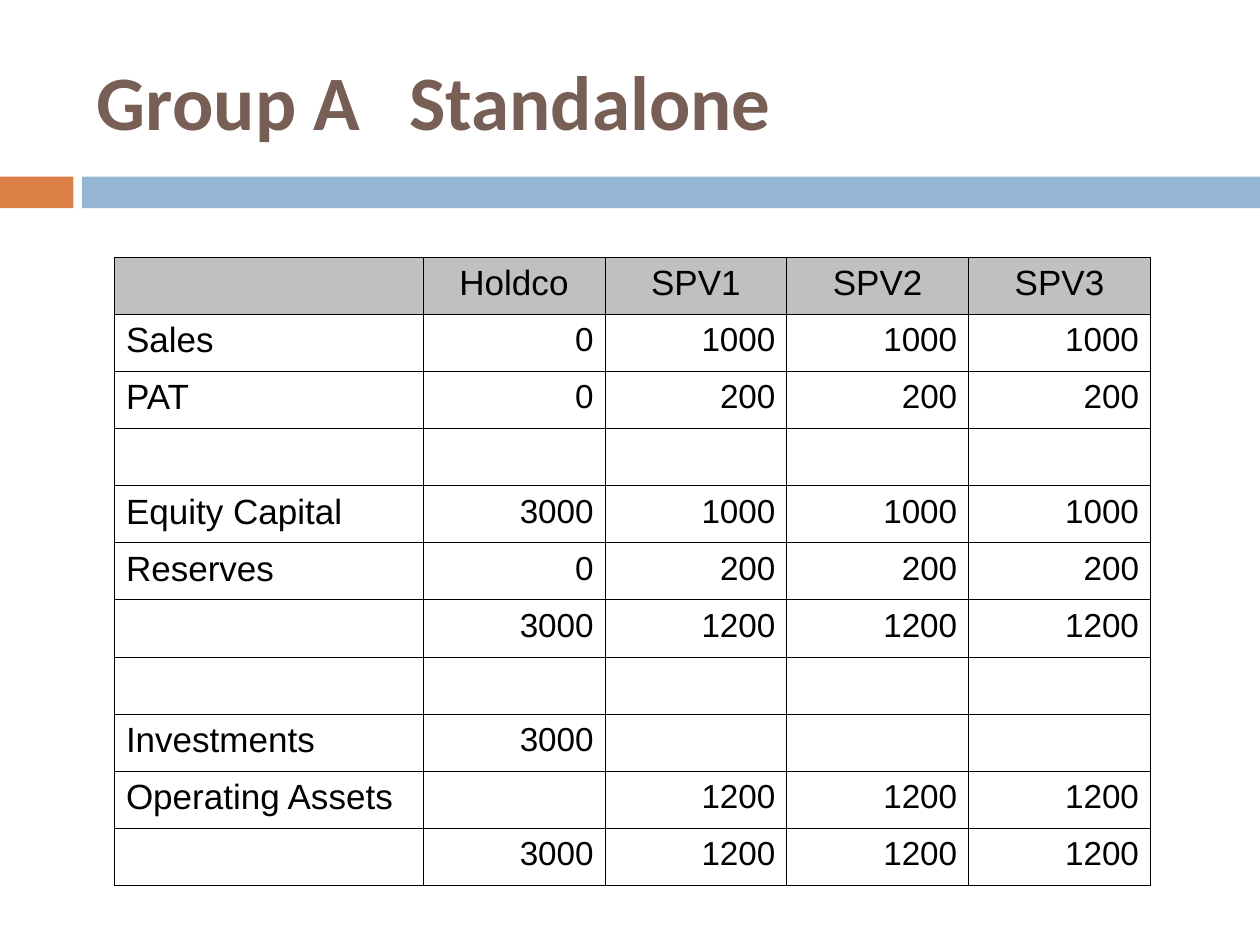
import pptx
import pptx.dml.color
import pptx.enum.shapes
import pptx.enum.text
import pptx.oxml
import pptx.oxml.ns
import pptx.util
from lxml import etree

Cm = pptx.util.Cm
Pt = pptx.util.Pt
ALIGN = pptx.enum.text.PP_ALIGN
MIDDLE = pptx.enum.text.MSO_ANCHOR.MIDDLE

HEADER = ["", "Holdco", "SPV1", "SPV2", "SPV3"]
ROWS = [
    ["Sales", "0", "1000", "1000", "1000"],
    ["PAT", "0", "200", "200", "200"],
    ["", "", "", "", ""],
    ["Equity Capital", "3000", "1000", "1000", "1000"],
    ["Reserves", "0", "200", "200", "200"],
    ["", "3000", "1200", "1200", "1200"],
    ["", "", "", "", ""],
    ["Investments", "3000", "", "", ""],
    ["Operating Assets", "", "1200", "1200", "1200"],
    ["", "3000", "1200", "1200", "1200"],
]


def color(hex_string):
    return pptx.dml.color.RGBColor.from_string(hex_string)


def write(frame, text, *, font="Arial", size=20, fill="000000", bold=False,
          align=ALIGN.LEFT, line_spacing=None, space_after=None):
    paragraph = frame.paragraphs[0]
    paragraph.alignment = align
    paragraph.line_spacing = line_spacing
    paragraph.space_after = space_after
    run = paragraph.add_run()
    run.text = text
    run.font.name = font
    run.font.size = Pt(size)
    run.font.bold = bold
    run.font.color.rgb = color(fill)
    return paragraph


def add_tab_stop(paragraph, position):
    properties = paragraph._p.get_or_add_pPr()
    tabs = etree.SubElement(properties, pptx.oxml.ns.qn("a:tabLst"))
    etree.SubElement(tabs, pptx.oxml.ns.qn("a:tab"), pos=str(position), algn="l")


def place_title(slide, left, top, width, height):
    title = slide.shapes.title
    title.left, title.top, title.width, title.height = left, top, width, height
    frame = title.text_frame
    frame.auto_size = pptx.enum.text.MSO_AUTO_SIZE.NONE
    frame.vertical_anchor = MIDDLE
    paragraph = write(frame, "Group A\tStandalone", font="Calibri", size=44,
                      fill="775F55", bold=True)
    add_tab_stop(paragraph, Cm(6.3))


def add_band(slide, left, top, width, height):
    """Short accent block and long bar, separated by a narrow gap."""
    block_width, bar_offset = Cm(1.48), Cm(1.65)
    for offset, part_width, fill in (
        (0, block_width, "DD8047"),
        (bar_offset, width - bar_offset, "94B6D2"),
    ):
        bar = slide.shapes.add_shape(pptx.enum.shapes.MSO_SHAPE.RECTANGLE,
                                     left + offset, top, part_width, height)
        bar.shadow.inherit = False
        bar.fill.solid()
        bar.fill.fore_color.rgb = color(fill)
        bar.line.fill.background()


def add_borders(cell, fill="000000", width=Pt(0.57)):
    properties = cell._tc.get_or_add_tcPr()
    for index, side in enumerate(("lnL", "lnR", "lnT", "lnB")):
        properties.insert(index, pptx.oxml.parse_xml(
            f'<a:{side} {pptx.oxml.ns.nsdecls("a")} w="{width}"><a:solidFill>'
            f'<a:srgbClr val="{fill}"/></a:solidFill></a:{side}>'))


def format_cell(cell, text, is_header, is_label):
    cell.vertical_anchor = MIDDLE
    cell.margin_left = cell.margin_right = Cm(0.23)
    cell.margin_top = Cm(0.18 if is_header or is_label else 0.15)
    cell.margin_bottom = Cm(0.13)
    if is_header:
        cell.fill.solid()
        cell.fill.fore_color.rgb = color("C0C0C0")
    else:
        cell.fill.background()
    add_borders(cell)
    if text:
        align = ALIGN.CENTER if is_header else ALIGN.LEFT if is_label else ALIGN.RIGHT
        write(cell.text_frame, text, size=20 if is_header or is_label else 19,
              align=align, line_spacing=0.76, space_after=Pt(14.2))


def add_accounts_table(slide, left, top, width, height):
    content = [HEADER] + ROWS
    table = slide.shapes.add_table(len(content), len(HEADER),
                                   left, top, width, height).table
    table.first_row = table.horz_banding = False
    label_width = Cm(6.22)
    value_width = (width - label_width) // (len(HEADER) - 1)
    for index, column in enumerate(table.columns):
        column.width = value_width if index else label_width
    for row_index, texts in enumerate(content):
        for column_index, text in enumerate(texts):
            format_cell(table.cell(row_index, column_index), text,
                        is_header=row_index == 0, is_label=column_index == 0)


def main():
    presentation = pptx.Presentation()
    presentation.slide_width, presentation.slide_height = Cm(25.4), Cm(19.05)
    title_only = presentation.slide_layouts[5]
    slide = presentation.slides.add_slide(title_only)
    add_band(slide, 0, Cm(3.56), presentation.slide_width, Cm(0.64))
    place_title(slide, Cm(1.7), Cm(0.64), Cm(22.66), Cm(2.74))
    add_accounts_table(slide, Cm(2.31), Cm(5.18), Cm(20.88), Cm(12.68))
    presentation.save("out.pptx")


if __name__ == "__main__":
    main()
